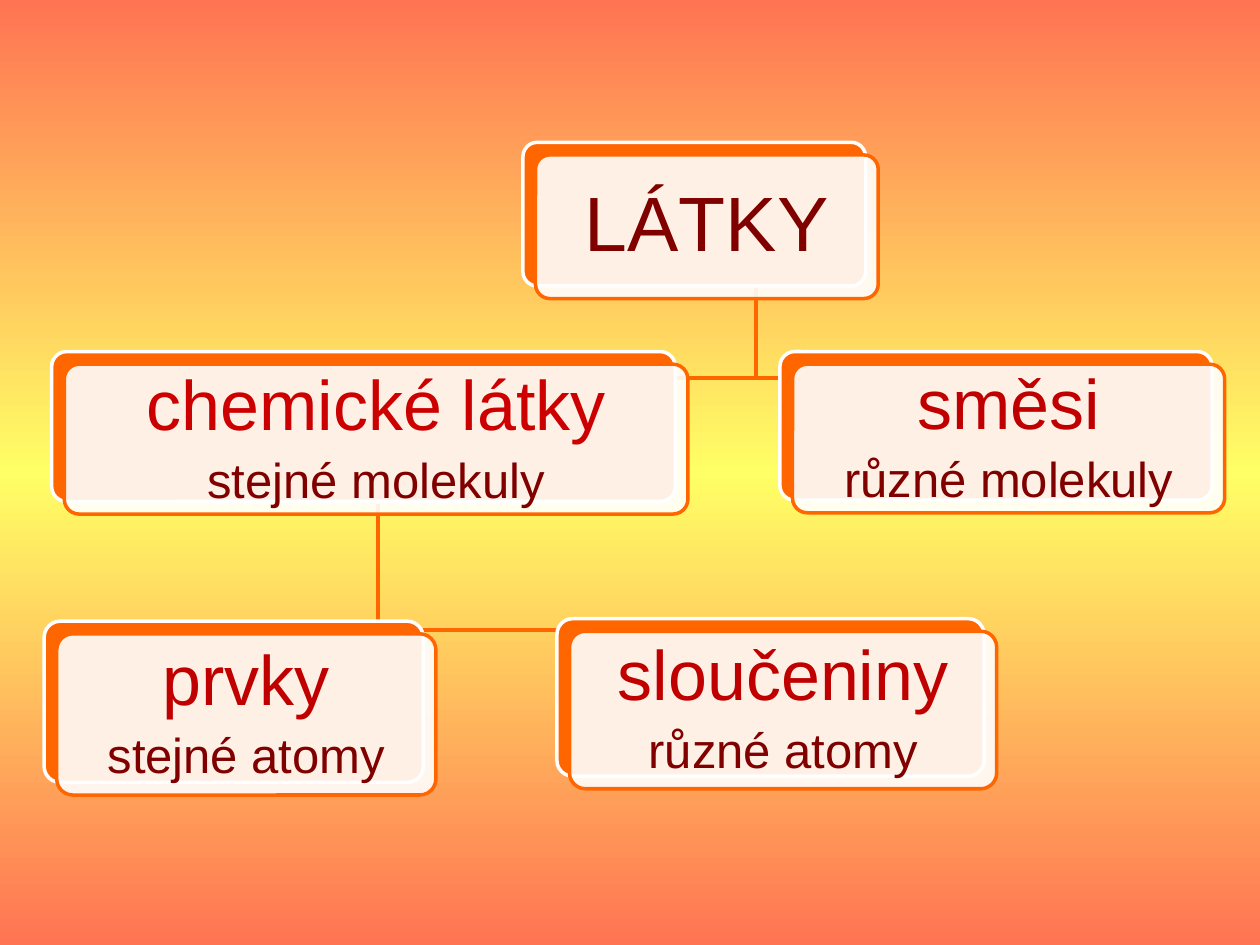
"""Builds a hierarchy slide that sorts substances into compounds, elements and mixtures."""
from copy import deepcopy
from dataclasses import dataclass

from pptx import Presentation
from pptx import util as u
from pptx.dml.color import RGBColor
from pptx.enum import shapes, text
from pptx.oxml.ns import qn
from lxml import etree

ORANGE = RGBColor(0xFF, 0x66, 0x00)
CORAL = RGBColor(0xFF, 0x74, 0x53)
YELLOW = RGBColor(0xFF, 0xFF, 0x66)
WHITE = RGBColor(0xFF, 0xFF, 0xFF)
MAROON = RGBColor(0x80, 0x00, 0x00)
RED = RGBColor(0xCC, 0x00, 0x00)
CRIMSON = RGBColor(0xC0, 0x00, 0x00)


@dataclass
class Node:
    left: float
    top: float
    width: float
    height: float
    lines: list

    @property
    def center(self):
        return self.left + self.width / 2

    @property
    def bottom(self):
        return self.top + self.height


@dataclass
class Chart:
    page: object
    font: str = "Arial"
    line_width: float = 2
    offset: float = 0.1
    elbow: float = 0.09
    inset: float = 0.17

    def background(self):
        fill = self.page.background.fill
        fill.gradient()
        fill.gradient_angle = 90
        stop_list = self.page._element.find(".//" + qn("a:gsLst"))
        stop_list.insert(1, deepcopy(stop_list[0]))
        for stop, color, position in zip(fill.gradient_stops, (CORAL, YELLOW, CORAL), (0, 0.5, 1)):
            stop.color.rgb = color
            stop.position = position

    def branch(self, parent, child):
        bend = child.top - self.elbow
        builder = self.page.shapes.build_freeform(parent.center, parent.bottom, scale=u.Inches(1))
        corners = [(parent.center, bend), (child.center, bend), (child.center, child.top)]
        builder.add_line_segments(corners, close=False)
        line = builder.convert_to_shape()
        line.shadow.inherit = False
        line.fill.background()
        line.line.color.rgb = ORANGE
        line.line.width = u.Pt(self.line_width)

    def panel(self, node, shift, fill, outline):
        place = (node.left + shift, node.top + shift, node.width, node.height)
        box = self.page.shapes.add_shape(
            shapes.MSO_SHAPE.ROUNDED_RECTANGLE, *map(u.Inches, place))
        box.adjustments[0] = 0.1
        box.shadow.inherit = False
        box.fill.solid()
        box.fill.fore_color.rgb = fill
        box.line.color.rgb = outline
        box.line.width = u.Pt(self.line_width)
        return box

    def card(self, node):
        self.panel(node, 0, ORANGE, WHITE)
        box = self.panel(node, self.offset, WHITE, ORANGE)
        color = box._element.spPr.find(qn("a:solidFill"))[0]
        etree.SubElement(color, qn("a:alpha"), val="90000")
        self.label(box.text_frame, node.lines)

    def label(self, frame, lines):
        frame.word_wrap = True
        frame.vertical_anchor = text.MSO_ANCHOR.MIDDLE
        frame.margin_left = frame.margin_right = u.Inches(self.inset)
        frame.margin_top = frame.margin_bottom = u.Inches(self.inset)
        frame.text = "\n".join(words for words, size, color in lines)
        for para, (words, size, color) in zip(frame.paragraphs, lines):
            para.alignment = text.PP_ALIGN.CENTER
            para.line_spacing = 0.9
            para.space_after = u.Pt(6)
            span = para.runs[0]
            span.font.name = self.font
            span.font.size = u.Pt(size)
            span.font.color.rgb = color


def pair(heading, detail, color=CRIMSON):
    return [(heading, 40, color), (detail, 28, MAROON)]


def main():
    deck = Presentation()
    deck.slide_width, deck.slide_height = u.Inches(10), u.Inches(7.5)
    chart = Chart(deck.slides.add_slide(deck.slide_layouts[6]))
    substances = Node(4.15, 1.13, 2.72, 1.14, [("LÁTKY", 44, MAROON)])
    chemicals = Node(0.41, 2.79, 4.95, 1.19, pair("chemické látky", "stejné molekuly", RED))
    elements = Node(0.35, 4.93, 3.01, 1.28, pair("prvky", "stejné atomy"))
    compounds = Node(4.42, 4.91, 3.39, 1.25, pair("sloučeniny", "různé atomy"))
    mixtures = Node(6.19, 2.79, 3.43, 1.18, pair("směsi", "různé molekuly"))

    chart.background()
    for parent, child in ((substances, mixtures), (chemicals, compounds),
                          (chemicals, elements), (substances, chemicals)):
        chart.branch(parent, child)
    for node in (substances, chemicals, elements, compounds, mixtures):
        chart.card(node)
    deck.save("out.pptx")


if __name__ == "__main__":
    main()
